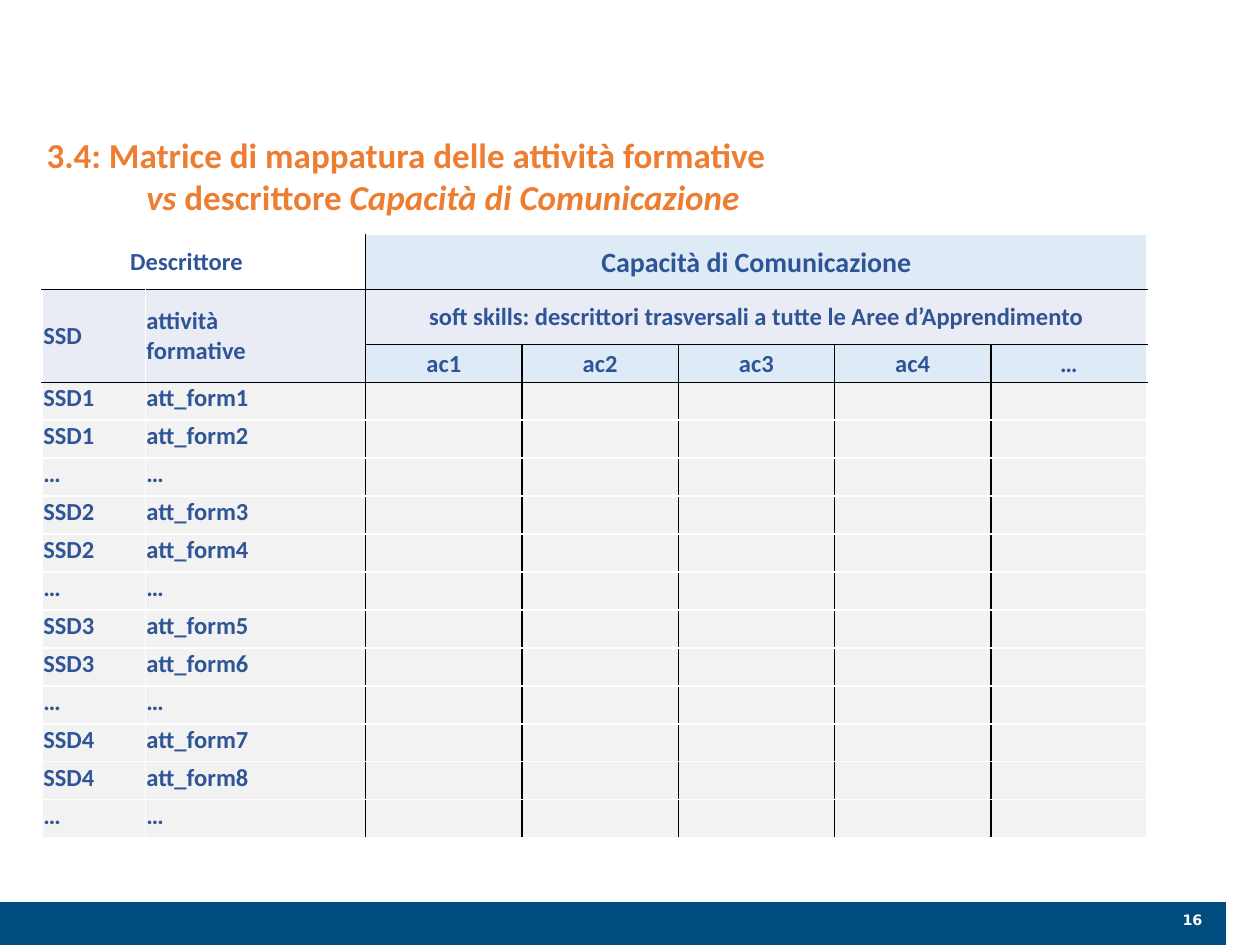
from lxml.etree import SubElement
from pptx import Presentation
from pptx.dml.color import RGBColor
from pptx.enum.shapes import MSO_SHAPE as Shape
from pptx.enum.text import MSO_ANCHOR as Anchor, PP_ALIGN as Align
from pptx.oxml.ns import qn
from pptx.util import Pt

WHITE = RGBColor(0xFF, 0xFF, 0xFF)
BLACK = RGBColor(0, 0, 0)
NAVY = RGBColor(0x00, 0x4C, 0x7E)
BLUE = RGBColor(0x2F, 0x55, 0x97)
ORANGE = RGBColor(0xED, 0x7D, 0x31)
SKY = RGBColor(0xDE, 0xEB, 0xF7)
LAVENDER = RGBColor(0xE9, 0xEB, 0xF5)
GRAY = RGBColor(0xF2, 0xF2, 0xF2)

SKILLS = ["ac1", "ac2", "ac3", "ac4", "…"]
HEADER_ROWS = 3
LABEL_COLUMNS = 2
GROUPS = 4
GROUP_SIZE = 3


def write(para, text, size=14, color=BLUE, font="Calibri", italic=False, align=Align.LEFT):
    para.alignment = align
    for index, line in enumerate(text.split("\n")):
        if index:
            para.add_line_break()
        if line:
            span = para.add_run()
            span.text = line
            span.font.name = font
            span.font.size = Pt(size)
            span.font.bold = True
            span.font.italic = italic
            span.font.color.rgb = color


def indent(para, left, first):
    properties = para._p.get_or_add_pPr()
    properties.set("marL", str(Pt(left)))
    properties.set("indent", str(Pt(first)))


def add_text_box(page, left, top, width, height):
    box = page.shapes.add_textbox(Pt(left), Pt(top), Pt(width), Pt(height))
    box.text_frame.word_wrap = True
    return box.text_frame.paragraphs[0]


def add_footer(page, left, top, width, height):
    bar = page.shapes.add_shape(Shape.RECTANGLE, Pt(left), Pt(top), Pt(width), Pt(height))
    bar.shadow.inherit = False
    bar.fill.solid()
    bar.fill.fore_color.rgb = NAVY
    bar.line.fill.background()
    para = add_text_box(page, left + width - 86.4, top + 1.4, 80, 17.3)
    write(para, "16", size=8.2, color=WHITE, font="DejaVu Sans", align=Align.RIGHT)


def add_title(page, left, top, width, height):
    para = add_text_box(page, left, top, width, height)
    indent(para, 57, -57)
    parts = [
        ("3.4: Matrice di mappatura delle attività formative \n", False),
        ("vs ", True),
        ("descrittore", False),
        (" Capacità di Comunicazione", True),
    ]
    for text, italic in parts:
        write(para, text, size=20, color=ORANGE, italic=italic)


def set_borders(cell, row, column, column_count):
    bottom = row + (cell.span_height if cell.is_merge_origin else 1)
    right = column + (cell.span_width if cell.is_merge_origin else 1)
    edges = {
        "lnL": LABEL_COLUMNS <= column,
        "lnR": LABEL_COLUMNS <= right < column_count,
        "lnT": 1 <= row <= HEADER_ROWS,
        "lnB": 1 <= bottom <= HEADER_ROWS,
    }
    properties = cell._tc.get_or_add_tcPr()
    for position, (tag, dark) in enumerate(edges.items()):
        line = SubElement(properties, qn(f"a:{tag}"), w=str(Pt(1)))
        properties.insert(position, line)
        fill = SubElement(line, qn("a:solidFill"))
        SubElement(fill, qn("a:srgbClr"), val=str(BLACK if dark else WHITE))


def format_cell(cell, row, column, column_count):
    cell.margin_left = cell.margin_right = cell.margin_top = Pt(0.72)
    cell.margin_bottom = 0
    cell.vertical_anchor = Anchor.MIDDLE if row < HEADER_ROWS else Anchor.TOP
    if row >= HEADER_ROWS:
        color = GRAY
    elif row == 1 or (row == 2 and column < LABEL_COLUMNS):
        color = LAVENDER
    else:
        color = SKY
    if row == 0 and column < LABEL_COLUMNS:
        cell.fill.background()
    else:
        cell.fill.solid()
        cell.fill.fore_color.rgb = color
    para = cell.text_frame.paragraphs[0]
    if not para.runs:
        SubElement(para._p, qn("a:endParaRPr"), sz="1400")
    if not cell.is_spanned:
        set_borders(cell, row, column, column_count)


def add_matrix(page, left, top, width, height):
    labels = [59, 126]
    skill_width = (width - sum(labels)) / len(SKILLS)
    widths = labels + [skill_width] * len(SKILLS)
    body_rows = GROUPS * GROUP_SIZE
    row_height = (height - 2 * 31.4) / (body_rows + 1)
    heights = [31.4, 31.4] + [row_height] * (body_rows + 1)

    frame = page.shapes.add_table(len(heights), len(widths), Pt(left), Pt(top), Pt(width), Pt(height))
    table = frame.table
    table.first_row = False
    table.horz_banding = False
    for column, size in zip(table.columns, widths):
        column.width = Pt(size)
    for row, size in zip(table.rows, heights):
        row.height = Pt(size)

    last = len(widths) - 1
    for start, end in [((0, 0), (0, 1)), ((0, 2), (0, last)), ((1, 0), (2, 0)),
                       ((1, 1), (2, 1)), ((1, 2), (1, last))]:
        table.cell(*start).merge(table.cell(*end))

    def fill_in(row, column, text, **style):
        para = table.cell(row, column).text_frame.paragraphs[0]
        write(para, text, **style)
        return para

    indent(fill_in(0, 0, "Descrittore"), 49.7, 0)
    fill_in(0, 2, "Capacità di Comunicazione", size=16, align=Align.CENTER)
    fill_in(1, 0, "SSD")
    fill_in(1, 1, "attività \nformative")
    fill_in(1, 2, "soft skills: descrittori trasversali a tutte le Aree d’Apprendimento",
            align=Align.CENTER)
    for column, skill in enumerate(SKILLS, LABEL_COLUMNS):
        fill_in(2, column, skill, align=Align.CENTER)
    for index in range(body_rows):
        group, place = divmod(index, GROUP_SIZE)
        more = place == GROUP_SIZE - 1
        activity = group * (GROUP_SIZE - 1) + place + 1
        fill_in(HEADER_ROWS + index, 0, "…" if more else f"SSD{group + 1}")
        fill_in(HEADER_ROWS + index, 1, "…" if more else f"att_form{activity}")

    for row in range(len(heights)):
        for column in range(len(widths)):
            format_cell(table.cell(row, column), row, column, len(widths))


def main():
    deck = Presentation()
    deck.slide_width, deck.slide_height = Pt(720), Pt(540)
    page = deck.slides.add_slide(deck.slide_layouts[6])
    add_footer(page, 0, 515.5, 700.6, 24.5)
    add_matrix(page, 24, 134, 631.5, 344.9)
    add_title(page, 19.5, 72.7, 619, 55.7)
    deck.save("out.pptx")


if __name__ == "__main__":
    main()
